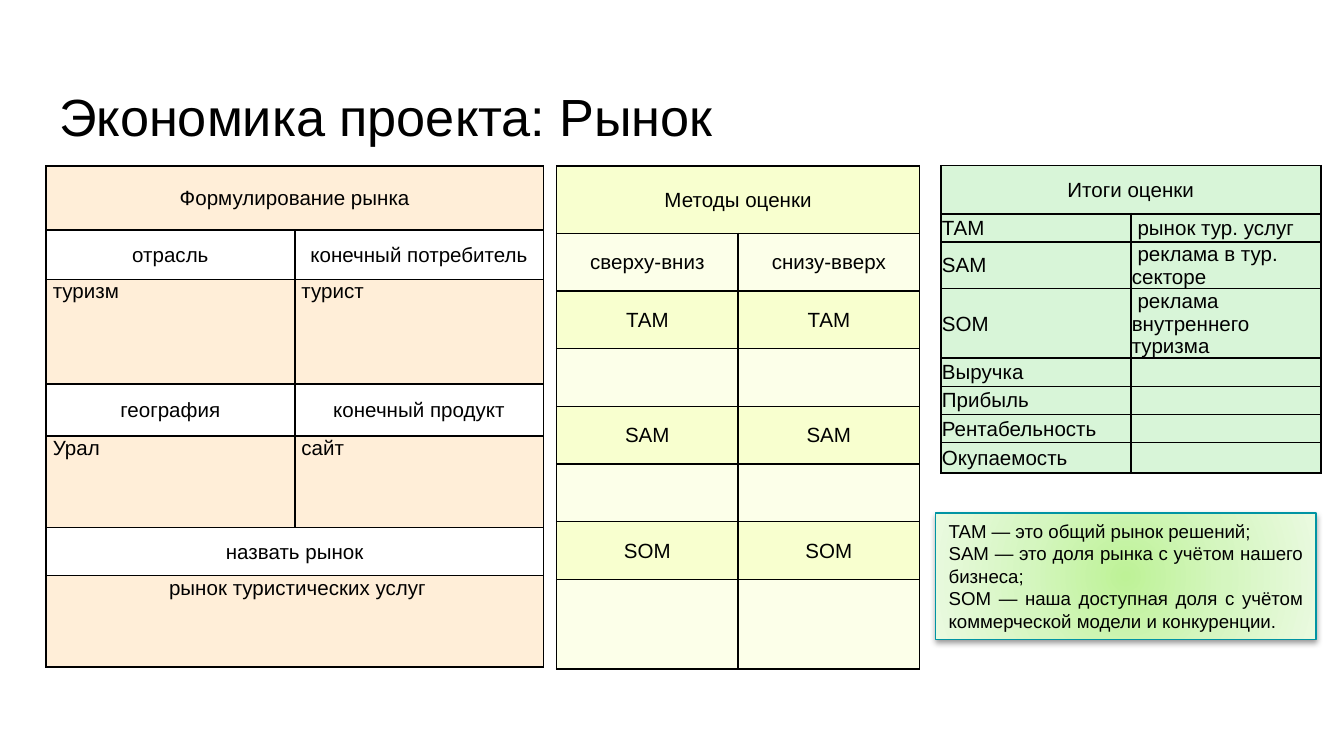
from collections import namedtuple

from lxml.etree import SubElement
from pptx import Presentation
from pptx.dml.color import RGBColor
from pptx.enum.shapes import MSO_SHAPE
from pptx.enum.text import MSO_ANCHOR as Anchor, MSO_AUTO_SIZE as AutoSize, PP_ALIGN as Align
from pptx.oxml import parse_xml
from pptx.oxml.ns import nsdecls, qn
from pptx.util import Cm, Pt

BLACK = RGBColor(0x00, 0x00, 0x00)
ORANGE = RGBColor(0xFF, 0xAB, 0x40)
YELLOW = RGBColor(0xF8, 0xFF, 0xCF)
PALE_YELLOW = RGBColor(0xFC, 0xFF, 0xE9)
GREEN = RGBColor(0x33, 0xCC, 0x33)
TEAL = RGBColor(0x00, 0x94, 0xA3)
NOTE_GRADIENT = (
    (0, RGBColor(0xBE, 0xF2, 0x97)),
    (50, RGBColor(0xD5, 0xF6, 0xC0)),
    (100, RGBColor(0xEA, 0xFA, 0xE0)),
)

Row = namedtuple("Row", "height texts fill align anchor", defaults=(None, Align.CENTER, Anchor.MIDDLE))


class SlideBuilder:
    """Holds the text style and the current slide and adds elements to it."""

    font = "Arial"
    color = BLACK

    def __init__(self, slide):
        self.slide = slide

    def add_text(self, paragraph, text, size, align):
        paragraph.alignment = align
        if not text:
            SubElement(paragraph._p, qn("a:endParaRPr"), sz=str(size * 100))
            return
        run = paragraph.add_run()
        run.text = text
        run.font.size = Pt(size)
        run.font.name = self.font
        run.font.color.rgb = self.color

    def title(self, text, left, top, width, height):
        title = self.slide.shapes.title
        title.left, title.top, title.width, title.height = Cm(left), Cm(top), Cm(width), Cm(height)
        frame = title.text_frame
        frame.auto_size = AutoSize.NONE
        frame.vertical_anchor = Anchor.TOP
        frame.margin_left = frame.margin_right = frame.margin_bottom = Cm(0.25)
        frame.margin_top = Cm(0.35)
        self.add_text(frame.paragraphs[0], text, 28, Align.LEFT)

    def style_cell(self, cell, fill, opacity):
        cell.margin_left = cell.margin_right = cell.margin_top = Cm(0.02)
        cell.margin_bottom = 0
        properties = cell._tc.get_or_add_tcPr()
        if fill is None:
            cell.fill.background()
        else:
            cell.fill.solid()
            cell.fill.fore_color.rgb = fill
            if opacity < 100:
                color = properties.find(f".//{qn('a:srgbClr')}")
                SubElement(color, qn("a:alpha"), val=str(opacity * 1000))
        for index, side in enumerate(("lnL", "lnR", "lnT", "lnB")):
            properties.insert(index, parse_xml(
                f'<a:{side} {nsdecls("a")} w="{Pt(1)}"><a:solidFill>'
                f'<a:srgbClr val="{BLACK}"/></a:solidFill></a:{side}>'))

    def table(self, left, top, column_width, rows, opacity=100):
        height = sum(row.height for row in rows)
        frame = self.slide.shapes.add_table(
            len(rows), 2, Cm(left), Cm(top), Cm(2 * column_width), Cm(height))
        table = frame.table
        table.first_row = table.horz_banding = False
        for column in table.columns:
            column.width = Cm(column_width)
        for index, row in enumerate(rows):
            table.rows[index].height = Cm(row.height)
            cells = [table.cell(index, column) for column in range(2)]
            for cell in cells:
                self.style_cell(cell, row.fill, opacity)
            if len(row.texts) == 1:
                cells[0].merge(cells[1])
            for cell, text in zip(cells, row.texts):
                cell.vertical_anchor = row.anchor
                self.add_text(cell.text_frame.paragraphs[0], text, 11, row.align)

    def note(self, left, top, width, height, lines):
        shape = self.slide.shapes.add_shape(
            MSO_SHAPE.RECTANGLE, Cm(left), Cm(top), Cm(width), Cm(height))
        shape.line.color.rgb = TEAL
        shape.line.width = Pt(0.75)
        shape.shadow.inherit = False
        properties = shape._element.spPr
        stops = "".join(
            f'<a:gs pos="{position * 1000}"><a:srgbClr val="{color}"/></a:gs>'
            for position, color in NOTE_GRADIENT)
        properties.find(qn("a:prstGeom")).addnext(parse_xml(
            f'<a:gradFill {nsdecls("a")}><a:gsLst>{stops}</a:gsLst><a:path path="circle">'
            '<a:fillToRect l="50000" t="50000" r="50000" b="50000"/></a:path></a:gradFill>'))
        properties.find(qn("a:effectLst")).append(parse_xml(
            f'<a:outerShdw {nsdecls("a")} blurRad="{Pt(3.1)}" dist="{Pt(1.6)}" dir="5400000" '
            f'rotWithShape="0"><a:srgbClr val="{BLACK}"><a:alpha val="38000"/></a:srgbClr></a:outerShdw>'))
        frame = shape.text_frame
        frame.word_wrap = True
        frame.auto_size = AutoSize.SHAPE_TO_FIT_TEXT
        frame.vertical_anchor = Anchor.TOP
        for index, text in enumerate(lines):
            paragraph = frame.add_paragraph() if index else frame.paragraphs[0]
            self.add_text(paragraph, text, 10, Align.JUSTIFY)


def main():
    presentation = Presentation()
    presentation.slide_width, presentation.slide_height = Cm(25.4), Cm(14.29)
    builder = SlideBuilder(presentation.slides.add_slide(presentation.slide_layouts[5]))
    builder.title("Экономика проекта: Рынок", 0.87, 1.24, 23.67, 1.6)

    builder.table(0.87, 3.14, 4.7, [
        Row(1.21, ["Формулирование рынка"], ORANGE),
        Row(0.93, ["отрасль", "конечный потребитель"]),
        Row(1.98, [" туризм", " турист"], ORANGE, Align.LEFT, Anchor.TOP),
        Row(0.98, ["география", "конечный продукт"]),
        Row(1.73, [" Урал", " сайт"], ORANGE, Align.LEFT, Anchor.TOP),
        Row(0.91, ["назвать рынок"]),
        Row(1.73, [" рынок туристических услуг"], ORANGE, Align.CENTER, Anchor.TOP),
    ], opacity=20)

    methods = [
        Row(1.27, ["Методы оценки"], YELLOW),
        Row(1.09, ["сверху-вниз", "снизу-вверх"], PALE_YELLOW),
    ]
    for name, gap in (("ТАМ", 1.09), ("SAM", 1.09), ("SOM", 1.7)):
        methods += [Row(1.09, [name] * 2, YELLOW), Row(gap, [""] * 2, PALE_YELLOW)]
    builder.table(10.52, 3.14, 3.43, methods)

    results = [
        (0.53, "ТАМ", " рынок тур. услуг"),
        (0.53, "SAM", " реклама в тур. секторе"),
        (0.56, "SOM", " реклама внутреннего туризма"),
        (0.53, "Выручка", ""),
        (0.53, "Прибыль", ""),
        (0.53, "Рентабельность", ""),
        (0.58, "Окупаемость", ""),
    ]
    builder.table(17.78, 3.13, 3.59, [Row(0.91, ["Итоги оценки"], GREEN)] + [
        Row(height, texts, GREEN, Align.LEFT) for height, *texts in results
    ], opacity=19)

    builder.note(17.68, 9.7, 7.19, 2.39, [
        "TAM — это общий рынок решений;",
        "SAM — это доля рынка с учётом нашего бизнеса;",
        "SOM — наша доступная доля с учётом коммерческой модели и конкуренции.",
    ])
    presentation.save("out.pptx")


if __name__ == "__main__":
    main()
